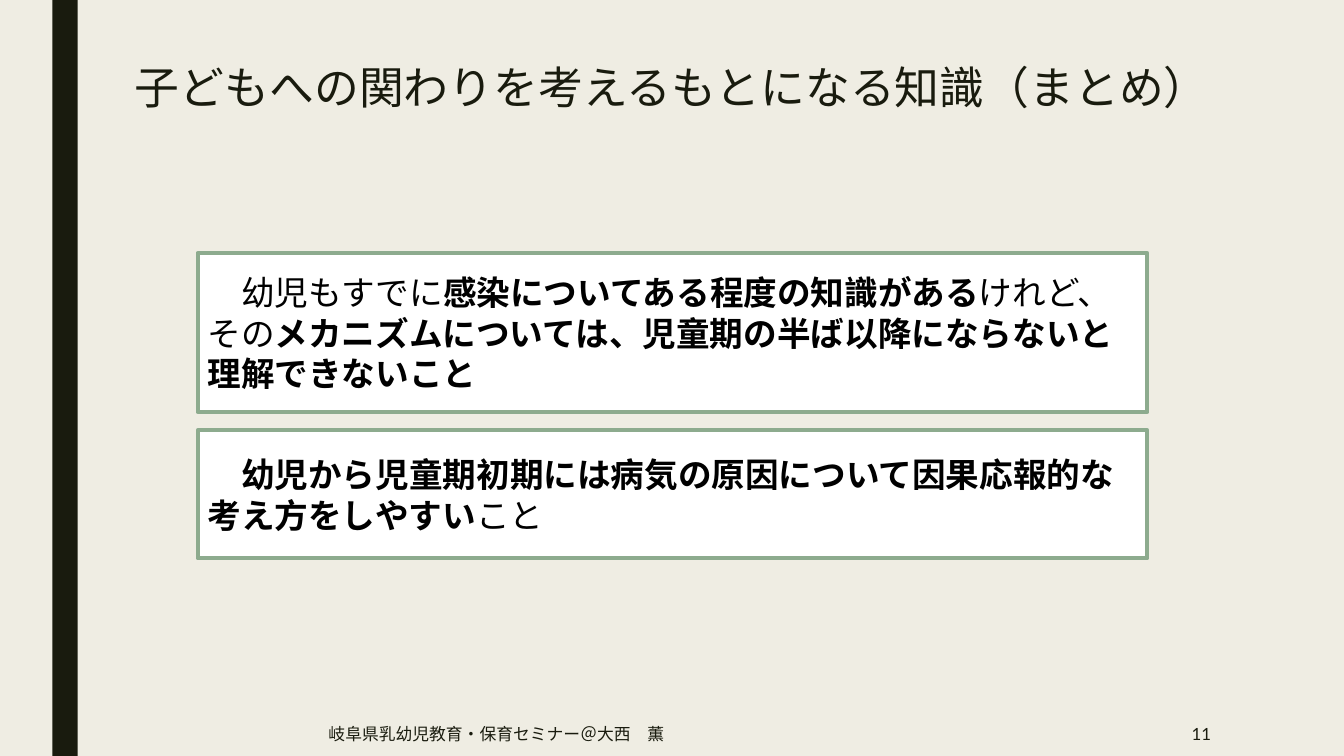
from dataclasses import dataclass
from typing import NamedTuple

from pptx import Presentation
from pptx.dml.color import RGBColor
from pptx.enum.shapes import MSO_SHAPE
from pptx.enum.text import MSO_ANCHOR, PP_ALIGN
from pptx.shapes.autoshape import Shape
from pptx.slide import Slide
from pptx.util import Inches, Pt


@dataclass(frozen=True)
class Theme:
    font: str = "Lato"
    background: RGBColor = RGBColor(0xEF, 0xED, 0xE3)
    ink: RGBColor = RGBColor(0x19, 0x1B, 0x0E)
    card_fill: RGBColor = RGBColor(0xFF, 0xFF, 0xFF)
    card_line: RGBColor = RGBColor(0x8D, 0xAB, 0x8E)
    card_text: RGBColor = RGBColor(0, 0, 0)
    title_size: int = 32
    card_size: int = 24
    footer_size: int = 12
    card_line_width: float = 2.75


THEME = Theme()


class Box(NamedTuple):
    left: float
    top: float
    width: float
    height: float


class Phrase(NamedTuple):
    text: str
    bold: bool = False


@dataclass(frozen=True)
class Card:
    top: float
    height: float
    phrases: tuple[Phrase, ...]


@dataclass(frozen=True)
class Label:
    box: Box
    text: str
    size: int
    align: PP_ALIGN = PP_ALIGN.LEFT
    anchor: MSO_ANCHOR = MSO_ANCHOR.MIDDLE
    line_spacing: float = 1.0


CARD_LEFT, CARD_WIDTH = 1.96, 9.42

CARDS = (
    Card(2.51, 1.58, (
        Phrase("　幼児もすでに"),
        Phrase("感染についてある程度の知識がある", bold=True),
        Phrase("けれど、その"),
        Phrase("メカニズムについては、児童期の半ば以降にならないと理解できないこと", bold=True),
    )),
    Card(4.27, 1.27, (
        Phrase("　"),
        Phrase("幼児から児童期初期には病気の原因について因果応報的な考え方をしやすい", bold=True),
        Phrase("こと"),
    )),
)

LABELS = (
    Label(Box(1.24, 0.61, 11.41, 1.02), "子どもへの関わりを考えるもとになる知識（まとめ）",
          THEME.title_size, anchor=MSO_ANCHOR.TOP, line_spacing=0.89),
    Label(Box(10.36, 7.06, 1.75, 0.44), "11", THEME.footer_size, align=PP_ALIGN.RIGHT),
    Label(Box(3.16, 7.06, 6.87, 0.44), "岐阜県乳幼児教育・保育セミナー＠大西　薫",
          THEME.footer_size),
)


def add_rectangle(slide: Slide, box: Box, fill: RGBColor) -> Shape:
    rectangle = slide.shapes.add_shape(MSO_SHAPE.RECTANGLE, *map(Inches, box))
    rectangle.shadow.inherit = False
    rectangle.fill.solid()
    rectangle.fill.fore_color.rgb = fill
    rectangle.line.fill.background()
    return rectangle


def write(shape: Shape, phrases: tuple[Phrase, ...], size: int, color: RGBColor,
          align: PP_ALIGN = PP_ALIGN.LEFT, anchor: MSO_ANCHOR = MSO_ANCHOR.MIDDLE,
          line_spacing: float = 1.0) -> None:
    frame = shape.text_frame
    frame.word_wrap = True
    frame.vertical_anchor = anchor
    paragraph = frame.paragraphs[0]
    paragraph.alignment = align
    paragraph.line_spacing = line_spacing
    for phrase in phrases:
        run = paragraph.add_run()
        run.text = phrase.text
        run.font.name = THEME.font
        run.font.size = Pt(size)
        run.font.bold = phrase.bold
        run.font.color.rgb = color


def add_card(slide: Slide, card: Card) -> None:
    panel = add_rectangle(slide, Box(CARD_LEFT, card.top, CARD_WIDTH, card.height),
                          THEME.card_fill)
    panel.line.color.rgb = THEME.card_line
    panel.line.width = Pt(THEME.card_line_width)
    write(panel, card.phrases, THEME.card_size, THEME.card_text)


def add_label(slide: Slide, label: Label) -> None:
    words = slide.shapes.add_textbox(*map(Inches, label.box))
    write(words, (Phrase(label.text),), label.size, THEME.ink,
          label.align, label.anchor, label.line_spacing)


def main() -> None:
    deck = Presentation()
    deck.slide_width, deck.slide_height = Inches(13.33), Inches(7.5)
    slide = deck.slides.add_slide(deck.slide_layouts[6])

    # Background and side band
    slide.background.fill.solid()
    slide.background.fill.fore_color.rgb = THEME.background
    add_rectangle(slide, Box(0.52, 0, 0.25, 7.5), THEME.ink)

    # Summary cards
    for card in CARDS:
        add_card(slide, card)

    # Title, page number and footer
    for label in LABELS:
        add_label(slide, label)

    deck.save("out.pptx")


if __name__ == "__main__":
    main()
